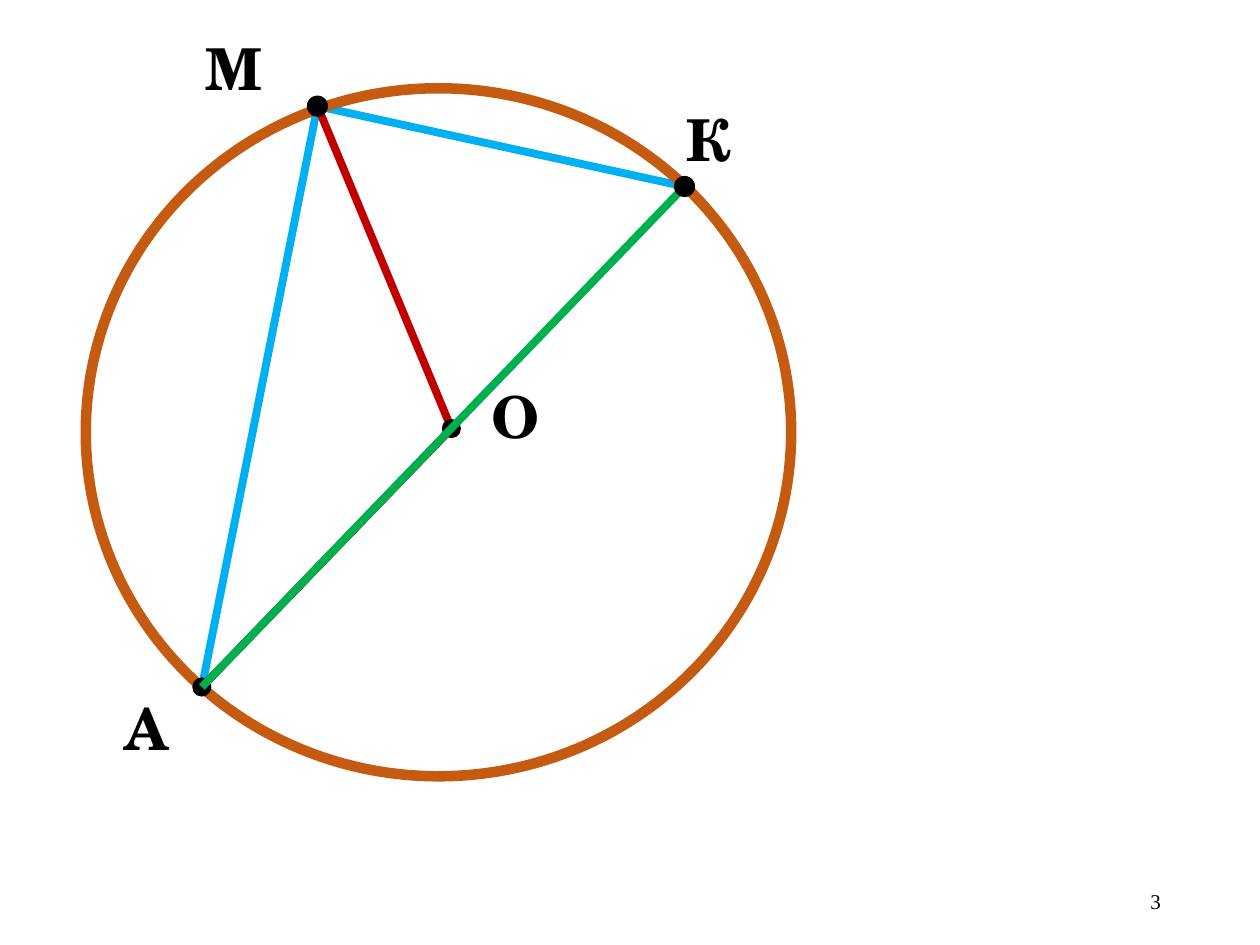
from lxml.etree import SubElement
from pptx import Presentation
from pptx.dml.color import RGBColor
from pptx.enum.shapes import MSO_CONNECTOR, MSO_SHAPE
from pptx.enum.text import MSO_ANCHOR, PP_ALIGN
from pptx.oxml.ns import qn
from pptx.util import Cm, Pt

COLORS = {
    "chord": "00B0F0",
    "radius": "C00000",
    "diameter": "00B050",
    "circle": "C55A11",
    "ink": "000000",
}
POINTS = {"М": (4.67, 0.36), "К": (12.07, 1.98), "О": (7.37, 6.86), "А": (2.34, 12.07)}
DOT_SIZES = {"М": 0.4, "К": 0.4, "О": 0.36, "А": 0.36}
LABELS = {
    "М": (2.16, -1.24, 1.6),
    "А": (0.53, 12.07, 1.4),
    "О": (7.92, 5.77, 1.19),
    "К": (11.86, 0.18, 1.4),
}
LABEL_HEIGHT = 1.68


def rgb(role):
    """Return the colour for a role on the slide."""
    return RGBColor.from_string(COLORS[role])


def add_segment(slide, left, top, ends, role):
    """Join two named points of the figure."""
    (x1, y1), (x2, y2) = (POINTS[end] for end in ends)
    segment = slide.shapes.add_connector(
        MSO_CONNECTOR.STRAIGHT,
        Cm(left + x1), Cm(top + y1), Cm(left + x2), Cm(top + y2),
    )
    segment.line.color.rgb = rgb(role)
    segment.line.width = Pt(4.5)
    SubElement(segment._element.spPr, qn("a:effectLst"))


def add_ellipse(slide, left, top, width, height, role, line_width, filled):
    """Draw an outlined ellipse, filled or hollow."""
    ellipse = slide.shapes.add_shape(
        MSO_SHAPE.OVAL, Cm(left), Cm(top), Cm(width), Cm(height)
    )
    ellipse.shadow.inherit = False
    if filled:
        ellipse.fill.solid()
        ellipse.fill.fore_color.rgb = rgb(role)
    else:
        ellipse.fill.background()
    ellipse.line.color.rgb = rgb(role)
    ellipse.line.width = Pt(line_width)


def add_dot(slide, left, top, point):
    """Mark a named point of the figure."""
    x, y = POINTS[point]
    size = DOT_SIZES[point]
    add_ellipse(slide, left + x - size / 2, top + y - size / 2, size, size, "ink", 0.75, True)


def add_text(slide, left, top, width, height, wording, font, size, bold, align, anchor):
    """Place one run of text in a box."""
    box = slide.shapes.add_textbox(Cm(left), Cm(top), Cm(width), Cm(height))
    frame = box.text_frame
    frame.word_wrap = True
    frame.vertical_anchor = anchor
    paragraph = frame.paragraphs[0]
    paragraph.alignment = align
    run = paragraph.add_run()
    run.text = wording
    run.font.name = font
    run.font.size = Pt(size)
    run.font.bold = bold
    run.font.color.rgb = rgb("ink")


def add_circle_figure(slide, left, top, width, height):
    """Draw the circle with its inscribed triangle and labelled points."""
    for ends, role in (("АМ", "chord"), ("КМ", "chord"), ("ОМ", "radius"), ("ОА", "radius")):
        add_segment(slide, left, top, ends, role)
    add_dot(slide, left, top, "О")
    add_ellipse(slide, left, top, width, height, "circle", 6, False)
    for point in "МА":
        add_dot(slide, left, top, point)
    add_segment(slide, left, top, "КА", "diameter")
    add_dot(slide, left, top, "К")
    for point, (x, y, label_width) in LABELS.items():
        add_text(slide, left + x, top + y, label_width, LABEL_HEIGHT, point,
                 "TeX Gyre Schola", 33, True, PP_ALIGN.CENTER, MSO_ANCHOR.TOP)


def add_page_number(slide, left, top, width, height):
    """Place the page number at the right of its box."""
    add_text(slide, left, top, width, height, "3", "Times New Roman", 12, False,
             PP_ALIGN.RIGHT, MSO_ANCHOR.MIDDLE)


def main():
    """Build and save the slide."""
    deck = Presentation()
    deck.slide_width, deck.slide_height = Cm(25.4), Cm(19.05)
    slide = deck.slides.add_slide(deck.slide_layouts[6])
    add_circle_figure(slide, 1.73, 1.78, 14.22, 13.87)
    add_page_number(slide, 17.93, 17.65, 5.72, 1.02)
    deck.save("out.pptx")


if __name__ == "__main__":
    main()
